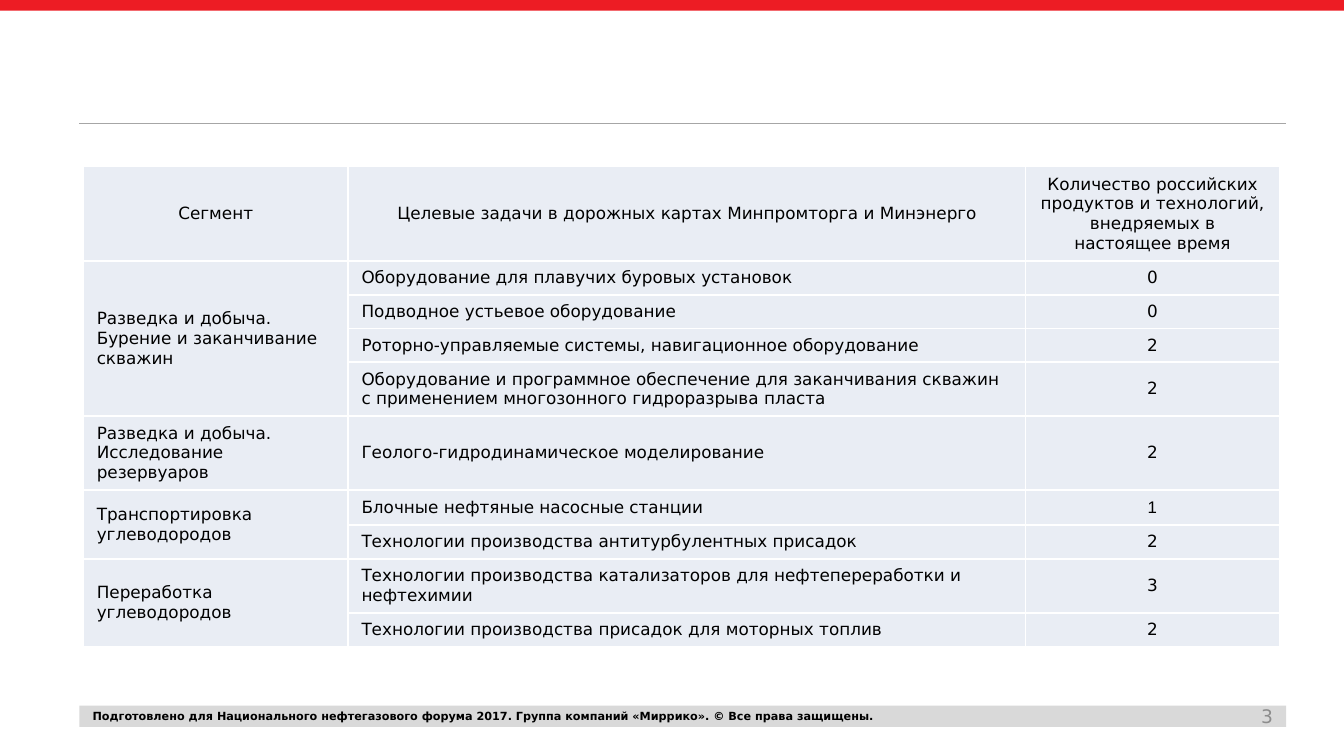
from lxml.etree import SubElement
from pptx import Presentation
from pptx.dml.color import RGBColor
from pptx.enum.shapes import MSO_CONNECTOR, MSO_SHAPE
from pptx.enum.text import MSO_ANCHOR, PP_ALIGN
from pptx.oxml.ns import qn
from pptx.util import Inches, Pt

COLORS = {
    "accent": "ED1C24",
    "rule": "A6A6A6",
    "footer": "D9D9D9",
    "number": "8C8C8C",
    "cell": "E9EDF4",
    "border": "FFFFFF",
    "text": "000000",
}
BODY_FONT = {"name": "DejaVu Sans", "size": Pt(9), "bold": False}
FOOTER_FONT = {"name": "DejaVu Sans", "size": Pt(6), "bold": True}
NUMBER_FONT = {"name": "DejaVu Sans", "size": Pt(10), "bold": False}

HEADERS = [
    "Сегмент",
    "Целевые задачи в дорожных картах Минпромторга и Минэнерго",
    "Количество российских продуктов и технологий, внедряемых в настоящее время",
]
# Each segment holds its tasks and the number of products for each
SEGMENTS = [
    ("Разведка и добыча. Бурение и заканчивание скважин", [
        ("Оборудование для плавучих буровых установок", "0"),
        ("Подводное устьевое оборудование", "0"),
        ("Роторно-управляемые системы, навигационное оборудование", "2"),
        ("Оборудование и программное обеспечение для заканчивания скважин "
         "с применением многозонного гидроразрыва пласта", "2"),
    ]),
    ("Разведка и добыча. Исследование резервуаров", [
        ("Геолого-гидродинамическое моделирование", "2"),
    ]),
    ("Транспортировка углеводородов", [
        ("Блочные нефтяные насосные станции", "1"),
        ("Технологии производства антитурбулентных присадок", "2"),
    ]),
    ("Переработка углеводородов", [
        ("Технологии производства катализаторов для нефтепереработки и нефтехимии", "3"),
        ("Технологии производства присадок для моторных топлив", "2"),
    ]),
]
COLUMN_WIDTHS = [1.97, 5.04, 1.89]
# Rows grow to fit their text
ROW_HEIGHTS = [0.68, 0.24, 0.24, 0.24, 0.38, 0.53, 0.26, 0.24, 0.38, 0.24]


def color(name):
    return RGBColor.from_string(COLORS[name])


def write_text(text_frame, text, font_format, color_name="text", align=PP_ALIGN.LEFT):
    paragraph = text_frame.paragraphs[0]
    paragraph.alignment = align
    run = paragraph.add_run()
    run.text = text
    for attribute, value in font_format.items():
        setattr(run.font, attribute, value)
    run.font.color.rgb = color(color_name)


def add_bar(slide, box, color_name):
    shape = slide.shapes.add_shape(MSO_SHAPE.RECTANGLE, *map(Inches, box))
    shape.shadow.inherit = False
    shape.fill.solid()
    shape.fill.fore_color.rgb = color(color_name)
    shape.line.fill.background()


def add_label(slide, box, text, font_format, color_name, align):
    text_frame = slide.shapes.add_textbox(*map(Inches, box)).text_frame
    text_frame.word_wrap = True
    text_frame.vertical_anchor = MSO_ANCHOR.MIDDLE
    write_text(text_frame, text, font_format, color_name, align)


def add_header(slide, left, top, width, height):
    # Full-width accent bar, then the rule under the title area
    add_bar(slide, (0, top, 10, 0.08), "accent")
    rule = slide.shapes.add_connector(
        MSO_CONNECTOR.STRAIGHT, Inches(left), Inches(top + height),
        Inches(left + width), Inches(top + height))
    rule.line.color.rgb = color("rule")
    rule.line.width = Pt(0.75)
    SubElement(rule._element.spPr, qn("a:effectLst"))


def add_footer(slide, left, top, width, height):
    add_bar(slide, (left, top, width, height), "footer")
    add_label(
        slide, (left, top - 0.07, 6.85, 0.3),
        "Подготовлено для Национального нефтегазового форума 2017. "
        "Группа компаний «Миррико». © Все права защищены.",
        FOOTER_FONT, "text", PP_ALIGN.LEFT)
    number_width = 2.05
    add_label(slide, (left + width - number_width, top, number_width, height),
              "3", NUMBER_FONT, "number", PP_ALIGN.RIGHT)


def format_cell(cell):
    properties = cell._tc.get_or_add_tcPr()
    for side in ("a:lnL", "a:lnR", "a:lnT", "a:lnB"):
        border = SubElement(properties, qn(side), w=str(Pt(1)))
        fill = SubElement(border, qn("a:solidFill"))
        SubElement(fill, qn("a:srgbClr"), val=COLORS["border"])
    cell.fill.solid()
    cell.fill.fore_color.rgb = color("cell")
    cell.vertical_anchor = MSO_ANCHOR.MIDDLE


def add_task_table(slide, left, top, width, height):
    table = slide.shapes.add_table(
        len(ROW_HEIGHTS), len(COLUMN_WIDTHS),
        *map(Inches, (left, top, width, height))).table
    table.first_row = table.horz_banding = False
    for column, column_width in zip(table.columns, COLUMN_WIDTHS):
        column.width = Inches(column_width)
    for row, row_height in zip(table.rows, ROW_HEIGHTS):
        row.height = Inches(row_height)
    for cell in table.iter_cells():
        format_cell(cell)

    for index, header in enumerate(HEADERS):
        write_text(table.cell(0, index).text_frame, header, BODY_FONT,
                   align=PP_ALIGN.CENTER)

    # Segment cells span all of their tasks
    row_index = 1
    for segment, tasks in SEGMENTS:
        segment_cell = table.cell(row_index, 0)
        if len(tasks) > 1:
            segment_cell.merge(table.cell(row_index + len(tasks) - 1, 0))
        write_text(segment_cell.text_frame, segment, BODY_FONT)
        for task, count in tasks:
            count_font = {**BODY_FONT, "name": "Arial"} if count == "1" else BODY_FONT
            write_text(table.cell(row_index, 1).text_frame, task, BODY_FONT)
            write_text(table.cell(row_index, 2).text_frame, count, count_font,
                       align=PP_ALIGN.CENTER)
            row_index += 1


def main():
    presentation = Presentation()
    # Widescreen, 16 to 9
    presentation.slide_width = Inches(10)
    presentation.slide_height = Inches(10) * 9 // 16
    slide = presentation.slides.add_slide(presentation.slide_layouts[6])
    add_header(slide, 0.59, 0, 8.98, 0.92)
    add_footer(slide, 0.59, 5.25, 8.98, 0.16)
    add_task_table(slide, 0.62, 1.24, sum(COLUMN_WIDTHS), 3.56)
    presentation.save("out.pptx")


if __name__ == "__main__":
    main()
